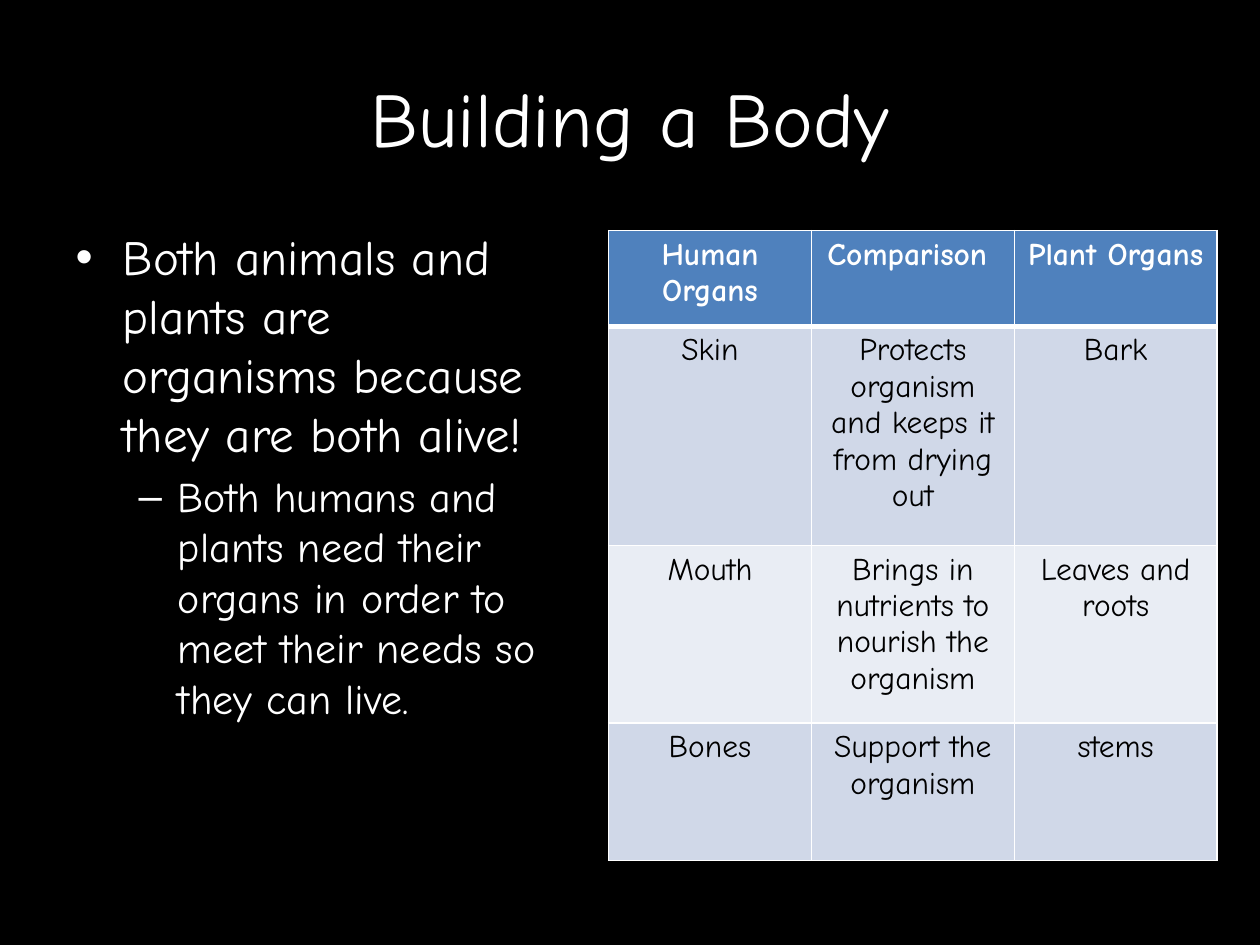
"""Build the "Building a Body" slide: a short list beside a comparison table."""
from lxml import etree
from pptx import Presentation
from pptx import util as u
from pptx.dml.color import RGBColor
from pptx.enum import text
from pptx.oxml import ns

FONT = "Comic Neue"
WHITE, BLACK = "FFFFFF", "000000"
HEADER, BANDS = "4F81BD", ("D0D8E8", "E9EDF4")
COLS = [1.61] * 3
ROWS = [0.76, 1.74, 1.41, 1.09]
CELLS = [
    ["Human Organs", "Comparison ", "Plant Organs"],
    ["Skin", "Protects organism and keeps it from drying out", "Bark"],
    ["Mouth", "Brings in nutrients to nourish the organism", "Leaves and roots"],
    ["Bones", "Support the organism", "stems"],
]
POINTS = [
    (0, 28, "Both animals and plants are organisms because they are both alive!"),
    (1, 24, "Both humans and plants need their organs in order to meet their "
            "needs so they can live."),
]


def paint(fill, color):
    fill.solid()
    fill.fore_color.rgb = RGBColor.from_string(color)


def add_text(p, content, color, **formats):
    r = p.add_run()
    r.text = content
    paint(r.font.fill, color)
    for name, value in {"name": FONT, **formats}.items():
        setattr(r.font, name, value)


def place(sp, left, top, width, height):
    box = {"left": left, "top": top, "width": width, "height": height}
    for name, value in box.items():
        setattr(sp, name, u.Inches(value))


def fill_title(sp):
    place(sp, 0.5, 0.3, 9, 1.25)
    tf = sp.text_frame
    tf.vertical_anchor = text.MSO_ANCHOR.MIDDLE
    p = tf.paragraphs[0]
    p.alignment = text.PP_ALIGN.CENTER
    add_text(p, "Building a Body", WHITE, size=u.Pt(44))


def fill_list(sp):
    place(sp, 0.5, 1.75, 4, 4.95)
    tf = sp.text_frame
    tf.auto_size = text.MSO_AUTO_SIZE.NONE
    for i, (level, size, content) in enumerate(POINTS):
        p = tf.add_paragraph() if i else tf.paragraphs[0]
        p.level = level
        add_text(p, content, WHITE, size=u.Pt(size))


def add_borders(cell, widths):
    tc_pr = cell._tc.get_or_add_tcPr()
    for side, width in widths.items():
        ln = etree.SubElement(tc_pr, ns.qn(f"a:ln{side}"), w=str(u.Pt(width)))
        fill = etree.SubElement(ln, ns.qn("a:solidFill"))
        etree.SubElement(fill, ns.qn("a:srgbClr"), val=WHITE)


def fill_cell(cell, row, content):
    header = row == 0
    add_borders(cell, {"L": 1, "R": 1, "T": 3 if row == 1 else 1, "B": 3 if header else 1})
    paint(cell.fill, HEADER if header else BANDS[(row - 1) % 2])
    p = cell.text_frame.paragraphs[0]
    p.alignment = text.PP_ALIGN.CENTER
    add_text(p, content, WHITE if header else BLACK, size=u.Pt(18), bold=header)


def add_organ_table(s):
    box = [u.Inches(v) for v in (4.83, 1.83, sum(COLS), sum(ROWS))]
    table = s.shapes.add_table(len(ROWS), len(COLS), *box).table
    for column, width in zip(table.columns, COLS):
        column.width = u.Inches(width)
    for i, (row, height) in enumerate(zip(table.rows, ROWS)):
        row.height = u.Inches(height)
        for cell, content in zip(row.cells, CELLS[i]):
            fill_cell(cell, i, content)


def main():
    prs = Presentation()
    prs.slide_width, prs.slide_height = u.Inches(10), u.Inches(7.5)
    s = prs.slides.add_slide(prs.slide_layouts[1])
    paint(s.background.fill, BLACK)
    fill_title(s.shapes.title)
    fill_list(s.placeholders[1])
    add_organ_table(s)
    prs.save("out.pptx")


if __name__ == "__main__":
    main()
